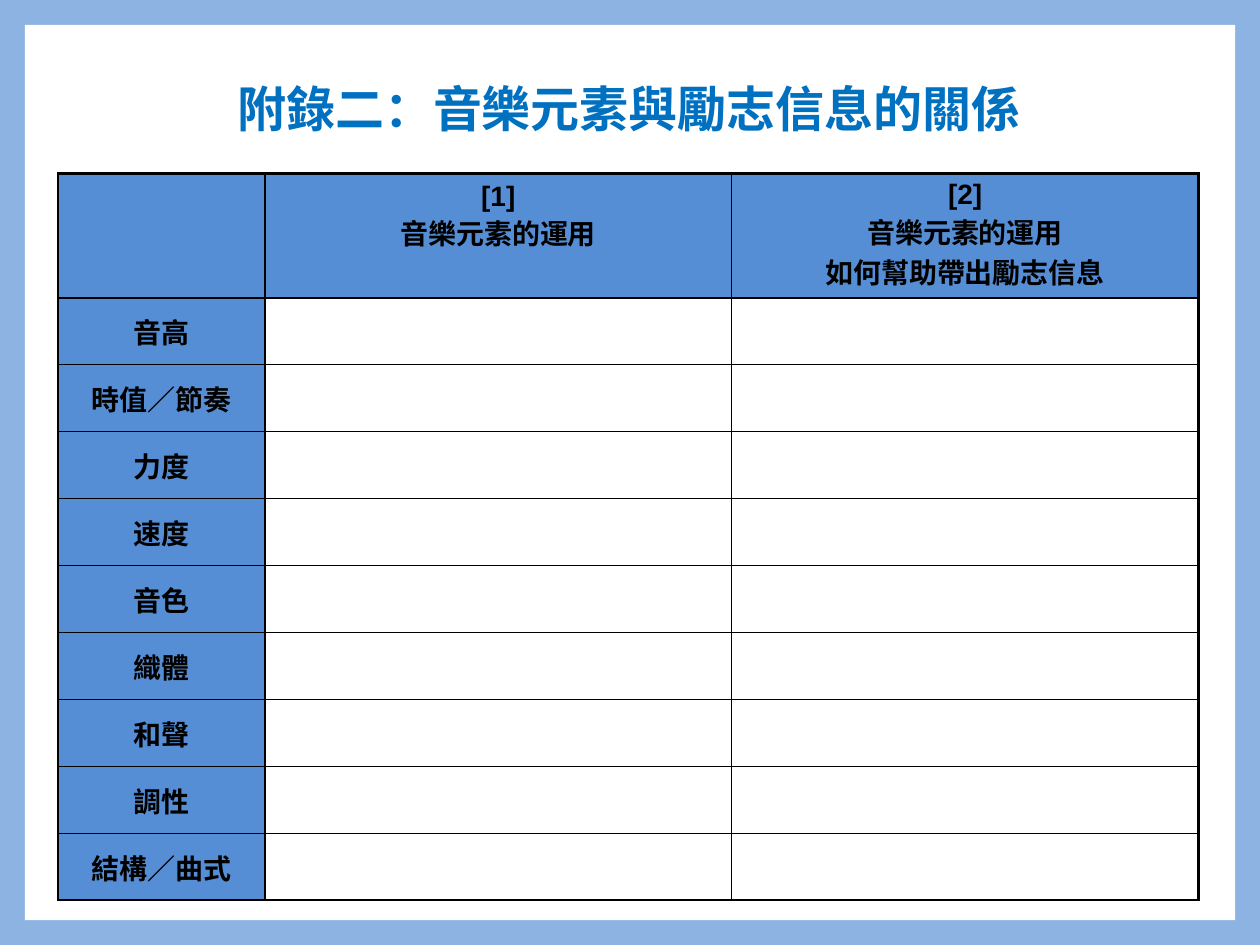
from dataclasses import dataclass

from lxml.etree import SubElement
from pptx import Presentation
from pptx.dml.color import RGBColor
from pptx.enum.shapes import MSO_SHAPE
from pptx.enum.text import MSO_ANCHOR, PP_ALIGN
from pptx.oxml import parse_xml
from pptx.oxml.ns import nsdecls, qn
from pptx.util import Cm, Pt


@dataclass(frozen=True)
class Theme:
    """Colours, fonts and sizes of the slide."""
    frame: str = "8DB3E2"
    panel: str = "FFFFFF"
    title: str = "0070C0"
    label: str = "558ED5"
    ink: str = "000000"
    latin_font: str = "Arial"
    chinese_font: str = "Noto Sans CJK SC"
    title_size: int = 28
    table_size: int = 16
    thin: float = 1
    thick: float = 1.5


THEME = Theme()
TITLE = "附錄二：音樂元素與勵志信息的關係"
HEADERS = ["", "[1]\n音樂元素的運用", "[2]\n音樂元素的運用\n如何幫助帶出勵志信息"]
ELEMENTS = ["音高", "時值／節奏", "力度", "速度", "音色", "織體", "和聲", "調性", "結構／曲式"]
COLUMN_WIDTHS = [4.17, 9.41, 9.41]
ROW_HEIGHTS = [2.5] + [1.35] * len(ELEMENTS)
THICK_ROW_LINES = {0, 1, len(ROW_HEIGHTS)}
THICK_COLUMN_LINES = {0, 1, len(COLUMN_WIDTHS)}


def apply_format(target, values):
    """Set each named attribute on the target."""
    for name, value in values.items():
        setattr(target, name, value)


def paint(fill, colour):
    """Give a fill one solid colour."""
    fill.solid()
    fill.fore_color.rgb = RGBColor.from_string(colour)


def format_text(text_frame, size, colour, font_name, line_spacing=None):
    """Centre and style every paragraph of a text frame."""
    for paragraph in text_frame.paragraphs:
        apply_format(paragraph, {"alignment": PP_ALIGN.CENTER, "line_spacing": line_spacing})
        for run in paragraph.runs:
            apply_format(run.font, {"size": Pt(size), "bold": True, "name": font_name})
            run.font.color.rgb = RGBColor.from_string(colour)
            SubElement(run.font._element, qn("a:ea"), typeface=THEME.chinese_font)


def add_title(slide):
    """Place and style the title placeholder."""
    title = slide.shapes.title
    apply_format(title, {"left": Cm(2.39), "top": Cm(1.32), "width": Cm(20.57), "height": Cm(1.85)})
    title.text_frame.text = TITLE
    title.text_frame.vertical_anchor = MSO_ANCHOR.MIDDLE
    format_text(title.text_frame, THEME.title_size, THEME.title, THEME.chinese_font, 0.9)


def add_panel(slide):
    """Put the white panel behind the title, leaving an even frame."""
    panel = slide.shapes.add_shape(MSO_SHAPE.RECTANGLE, Cm(0.5), Cm(0.5), Cm(24.4), Cm(18.05))
    panel.shadow.inherit = False
    paint(panel.fill, THEME.panel)
    panel.line.fill.background()
    slide.shapes.title.element.addprevious(panel.element)


def set_borders(cell, row, column):
    """Draw the four cell borders, thick on the main grid lines."""
    edges = {
        "lnL": column in THICK_COLUMN_LINES,
        "lnR": column + 1 in THICK_COLUMN_LINES,
        "lnT": row in THICK_ROW_LINES,
        "lnB": row + 1 in THICK_ROW_LINES,
    }
    properties = cell._tc.get_or_add_tcPr()
    for position, (tag, is_thick) in enumerate(edges.items()):
        width = Pt(THEME.thick if is_thick else THEME.thin)
        properties.insert(position, parse_xml(
            f'<a:{tag} {nsdecls("a")} w="{width}"><a:solidFill>'
            f'<a:srgbClr val="{THEME.ink}"/></a:solidFill></a:{tag}>'))


def format_cell(cell, text, row, column):
    """Fill one table cell with its text, colour and borders."""
    apply_format(cell, {"text": text, "vertical_anchor": MSO_ANCHOR.MIDDLE,
                        "margin_top": Cm(0.1), "margin_bottom": Cm(0.1)})
    format_text(cell.text_frame, THEME.table_size, THEME.ink, THEME.latin_font)
    if row == 0 or column == 0:
        paint(cell.fill, THEME.label)
    else:
        cell.fill.background()
    set_borders(cell, row, column)


def add_worksheet_table(slide):
    """Add the table of musical elements with blank answer cells."""
    rows = [HEADERS] + [[element, "", ""] for element in ELEMENTS]
    table = slide.shapes.add_table(
        len(rows), len(HEADERS), Cm(1.17), Cm(3.5),
        Cm(sum(COLUMN_WIDTHS)), Cm(sum(ROW_HEIGHTS))).table
    apply_format(table, {"first_row": False, "horz_banding": False})
    for column, width in zip(table.columns, COLUMN_WIDTHS):
        column.width = Cm(width)
    for row, height in zip(table.rows, ROW_HEIGHTS):
        row.height = Cm(height)
    for row, texts in enumerate(rows):
        for column, text in enumerate(texts):
            format_cell(table.cell(row, column), text, row, column)
    table.cell(0, 1).margin_bottom = Cm(0.85)


def main():
    """Build and save the presentation."""
    presentation = Presentation()
    apply_format(presentation, {"slide_width": Cm(25.4), "slide_height": Cm(19.05)})
    slide = presentation.slides.add_slide(presentation.slide_layouts[5])
    paint(slide.background.fill, THEME.frame)
    add_panel(slide)
    add_title(slide)
    add_worksheet_table(slide)
    presentation.save("out.pptx")


if __name__ == "__main__":
    main()
